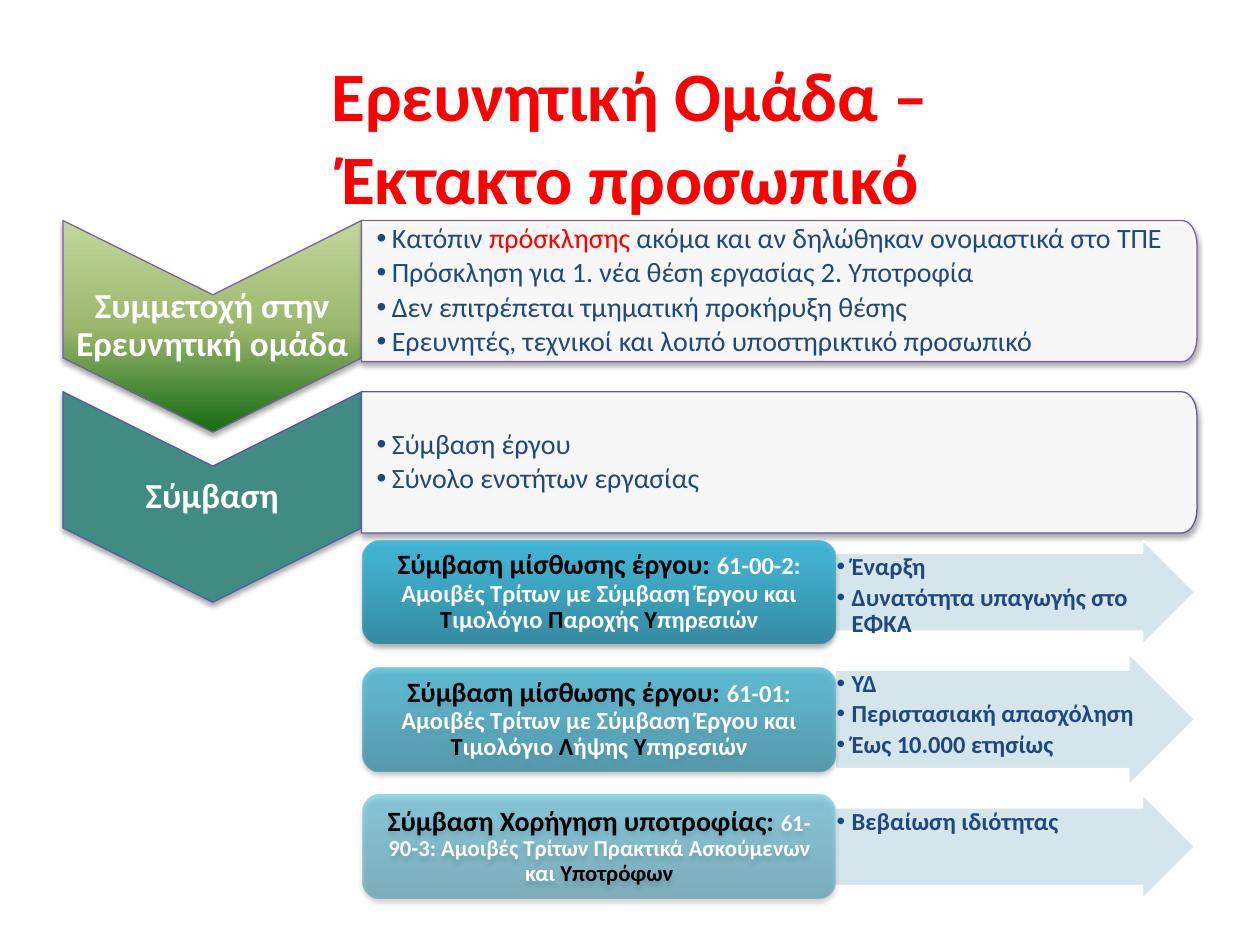
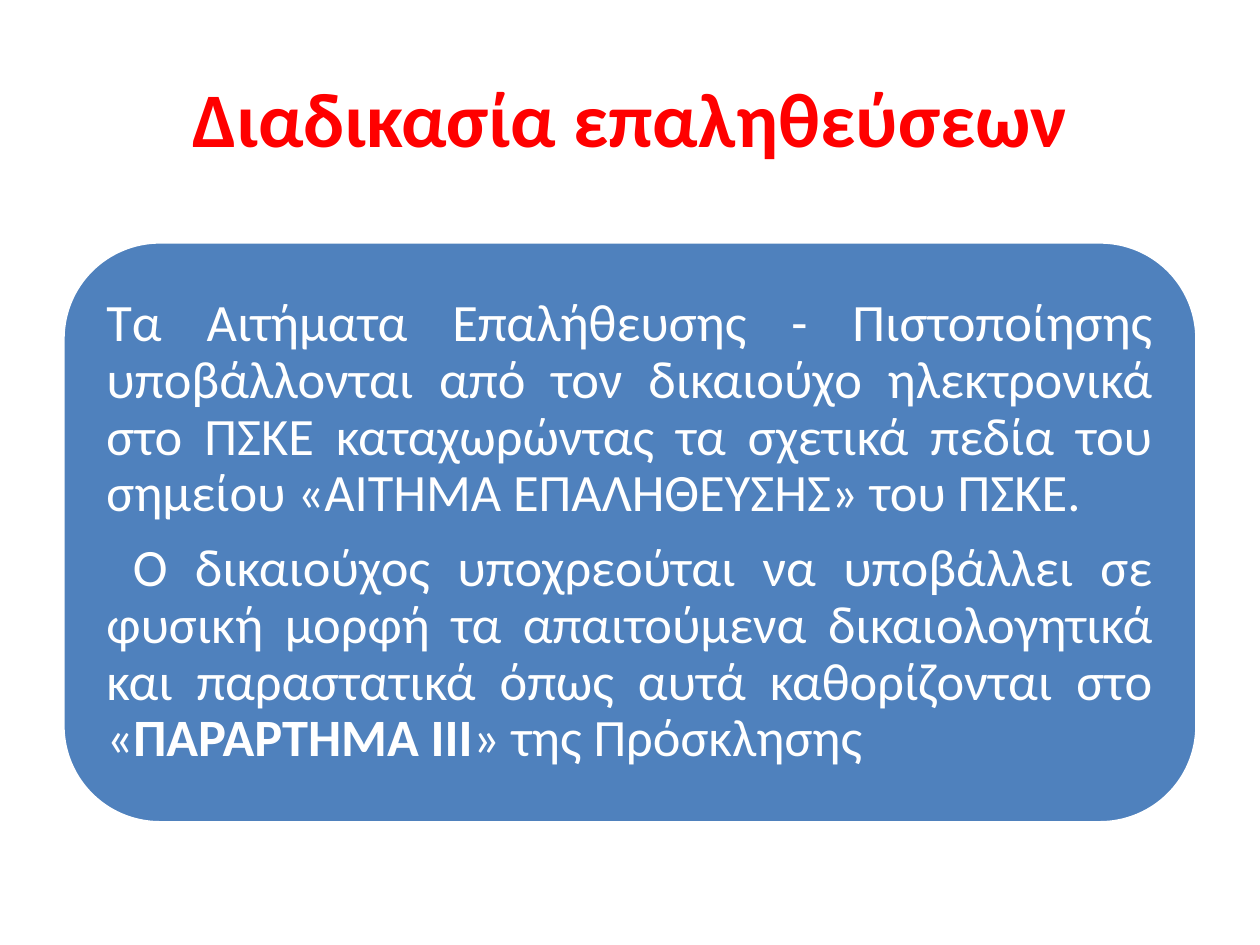
import math
from dataclasses import dataclass

import pptx
import pptx.util
import pptx.dml.color
import pptx.enum.shapes
import pptx.enum.text
import pptx.oxml.ns
from lxml import etree

Kind = pptx.enum.shapes.MSO_SHAPE
Align = pptx.enum.text.PP_ALIGN
Anchor = pptx.enum.text.MSO_ANCHOR
qn = pptx.oxml.ns.qn
SCALE = 9144


@dataclass(frozen=True)
class Theme:
    font: str = "Calibri"
    red: str = "FF0000"
    white: str = "FFFFFF"
    black: str = "000000"
    navy: str = "1F497D"
    blue: str = "4F81BD"
    teal: str = "408C83"
    pale: str = "D0E3EA"
    plum: str = "7D60A0"
    iris: str = "5B57AC"
    green: tuple = ((0, "C3D69B"), (50, "9CB86E"), (100, "156B13"))
    aqua: tuple = ((0, "2A88A2"), (80, "37B1D2"), (100, "34B4D6"))
    title: float = 39.6
    large: float = 44.1
    body: int = 30
    head: int = 20
    item: int = 16
    note: int = 14
    small: int = 13


T = Theme()


def px(num):
    return pptx.util.Emu(round(num * SCALE))


def rgb(code):
    return pptx.dml.color.RGBColor.from_string(code)


def sub(node, tag, **attrs):
    return etree.SubElement(node, qn(tag), {k: str(v) for k, v in attrs.items()})


def write(shape, paras, size, color, bold=False, align=Align.LEFT, anchor=Anchor.MIDDLE,
          inset=(10, 5, 10, 5), lead=0.9, after=0, bullet=False, first=0):
    frame = shape.text_frame
    frame.word_wrap = True
    frame.vertical_anchor = anchor
    (frame.margin_left, frame.margin_top,
     frame.margin_right, frame.margin_bottom) = map(px, inset)
    for pos, runs in enumerate(paras):
        para = frame.add_paragraph() if pos else frame.paragraphs[0]
        para.alignment = align
        para.line_spacing = lead
        para.space_after = pptx.util.Pt(after)
        props = para._p.get_or_add_pPr()
        if bullet:
            props.set("marL", str(px(12)))
            props.set("indent", str(px(-12)))
            sub(props, "a:buFont", typeface="Arial")
            sub(props, "a:buChar", char="•")
        elif pos and first:
            props.set("indent", str(px(first)))
        for part in [runs] if isinstance(runs, str) else runs:
            words, look = (part, {}) if isinstance(part, str) else part
            if words == "\n":
                para.add_line_break()
                continue
            run = para.add_run()
            run.text = words
            run.font.name = T.font
            run.font.size = pptx.util.Pt(look.get("size", size))
            run.font.bold = look.get("bold", bold)
            run.font.color.rgb = rgb(look.get("color", color))


def paint(shape, fill, alpha=100, angle=90, line=None, width=0.75, shade=False):
    shape.shadow.inherit = False
    props = shape._element.spPr
    if isinstance(fill, str):
        shape.fill.solid()
        shape.fill.fore_color.rgb = rgb(fill)
        tints = [props.find(qn("a:solidFill"))[0]]
    else:
        shape.fill.gradient()
        grad = props.find(qn("a:gradFill"))
        for child in list(grad):
            grad.remove(child)
        stops = sub(grad, "a:gsLst")
        tints = [sub(sub(stops, "a:gs", pos=pos * 1000), "a:srgbClr", val=code)
                 for pos, code in fill]
        sub(grad, "a:lin", ang=angle * 60000, scaled=0)
    if alpha < 100:
        for tint in tints:
            sub(tint, "a:alpha", val=alpha * 1000)
    if line:
        shape.line.color.rgb = rgb(line)
        shape.line.width = pptx.util.Pt(width)
    else:
        shape.line.fill.background()
    if shade:
        cast = sub(props.find(qn("a:effectLst")), "a:outerShdw", blurRad=40000,
                   dist=23000, dir=5400000, rotWithShape=0)
        sub(sub(cast, "a:srgbClr", val=T.black), "a:alpha", val=35000)


def place(slide, kind, x, y, w, h):
    return slide.shapes.add_shape(kind, px(x), px(y), px(w), px(h))


def trace(slide, points):
    spots = [(px(x), px(y)) for x, y in points]
    pen = slide.shapes.build_freeform(*spots[0], scale=1.0)
    pen.add_line_segments(spots[1:], close=True)
    return pen.convert_to_shape()


def title(slide, y, runs, size):
    box = slide.shapes.add_textbox(px(50), px(y), px(900), px(125))
    write(box, [runs], size, T.red, bold=True, align=Align.CENTER, lead=1.0)


def step(slide, y, high, label, items, fill, line):
    left, mid, edge, right = 50, 169, 287, 950
    dip = 59
    mark = trace(slide, [(edge, y), (edge, y + high - dip), (mid, y + high),
                         (left, y + high - dip), (left, y), (mid, y + dip)])
    paint(mark, fill, line=line, shade=True)
    write(mark, [label], T.head, T.white, bold=True, align=Align.CENTER,
          inset=(1, 48, 1, 48), after=7)
    base = y + 112
    wide, tall = 12, 19
    turns = [math.radians(deg) for deg in range(0, 91, 10)]
    upper = [(right - wide + wide * math.sin(t), y + tall - tall * math.cos(t))
             for t in turns]
    lower = [(x, y + base - spot) for x, spot in reversed(upper)]
    panel = trace(slide, [(edge, y), *upper, *lower, (edge, base)])
    paint(panel, T.white, alpha=90, line=line, shade=True)
    write(panel, items, T.item, T.navy, inset=(12, 5, 5, 5), after=2.4, bullet=True)


def deal(slide, y, name, terms, size, notes, alpha, tall=82):
    high = 82
    arrow = place(slide, Kind.RIGHT_ARROW, 663, y + (high - tall) / 2, 285, tall)
    arrow.adjustments[0] = 0.75
    arrow.adjustments[1] = 0.5
    paint(arrow, T.pale, alpha=90, line=T.white)
    write(arrow, notes, T.note, T.navy, bold=True, anchor=Anchor.TOP,
          inset=(1, 1, 1, 1), after=2.1, bullet=True)
    card = place(slide, Kind.ROUNDED_RECTANGLE, 288, y, 375, high)
    paint(card, T.aqua, alpha=alpha, angle=270, shade=True)
    tones = (T.white, T.black)
    runs = [(name, {"color": T.black, "size": T.item})]
    runs += [(bit, {"color": tones[pos % 2]}) for pos, bit in enumerate(terms.split("|"))]
    write(card, [runs], size, T.white, bold=True, align=Align.CENTER,
          inset=(7, 3, 7, 3), after=5)


def staff(slide):
    title(slide, 45, ["Ερευνητική Ομάδα –", "\n", "Έκτακτο προσωπικό"], T.title)
    step(slide, 175, 168, "Συμμετοχή στην Ερευνητική ομάδα", [
        ["Κατόπιν ", ("πρόσκλησης", {"color": T.red}),
         " ακόμα και αν δηλώθηκαν ονομαστικά στο ΤΠΕ"],
        "Πρόσκληση για 1. νέα θέση εργασίας 2. Υποτροφία",
        "Δεν επιτρέπεται τμηματική προκήρυξη θέσης",
        "Ερευνητές, τεχνικοί και λοιπό υποστηρικτικό προσωπικό",
    ], T.green, T.plum)
    step(slide, 311, 167, "Σύμβαση", ["Σύμβαση έργου", "Σύνολο ενοτήτων εργασίας"],
         T.teal, T.iris)
    hire = "Σύμβαση μίσθωσης έργου: "
    fees = "Αμοιβές Τρίτων με Σύμβαση Έργου και |Τ|ιμολόγιο "
    deals = [
        (hire, f"61-00-2: {fees}|Π|αροχής |Υ|πηρεσιών", T.note,
         ["Έναρξη", "Δυνατότητα υπαγωγής στο ΕΦΚΑ"], 90, 82),
        (hire, f"61-01: {fees}|Λ|ήψης |Υ|πηρεσιών", T.note,
         ["ΥΔ", "Περιστασιακή απασχόληση", "Έως 10.000 ετησίως"], 70, 104),
        ("Σύμβαση Χορήγηση υποτροφίας: ",
         "61-90-3: Αμοιβές Τρίτων Πρακτικά Ασκούμενων και |Υποτρόφων", T.small,
         ["Βεβαίωση ιδιότητας"], 50, 82),
    ]
    for row, data in enumerate(deals):
        deal(slide, 429 + 101 * row, *data)


def checks(slide):
    title(slide, 30, "Διαδικασία επαληθεύσεων", T.large)
    panel = place(slide, Kind.ROUNDED_RECTANGLE, 50, 192, 900, 461)
    paint(panel, T.blue, line=T.white, width=2)
    write(panel, [
        "Τα Αιτήματα Επαλήθευσης - Πιστοποίησης υποβάλλονται από τον δικαιούχο "
        "ηλεκτρονικά στο ΠΣΚΕ καταχωρώντας τα σχετικά πεδία του σημείου "
        "«ΑΙΤΗΜΑ ΕΠΑΛΗΘΕΥΣΗΣ» του ΠΣΚΕ.",
        ["Ο δικαιούχος υποχρεούται να υποβάλλει σε φυσική μορφή τα απαιτούμενα "
         "δικαιολογητικά και παραστατικά όπως αυτά καθορίζονται στο «",
         ("ΠΑΡΑΡΤΗΜΑ ΙΙΙ", {"bold": True}), "» της Πρόσκλησης"],
    ], T.body, T.white, align=Align.JUSTIFY, inset=(12, 12, 12, 12), after=10.5, first=21)


def main():
    deck = pptx.Presentation()
    deck.slide_width, deck.slide_height = px(1000), px(750)
    for build in (staff, checks):
        build(deck.slides.add_slide(deck.slide_layouts[6]))
    deck.save("out.pptx")


if __name__ == "__main__":
    main()
